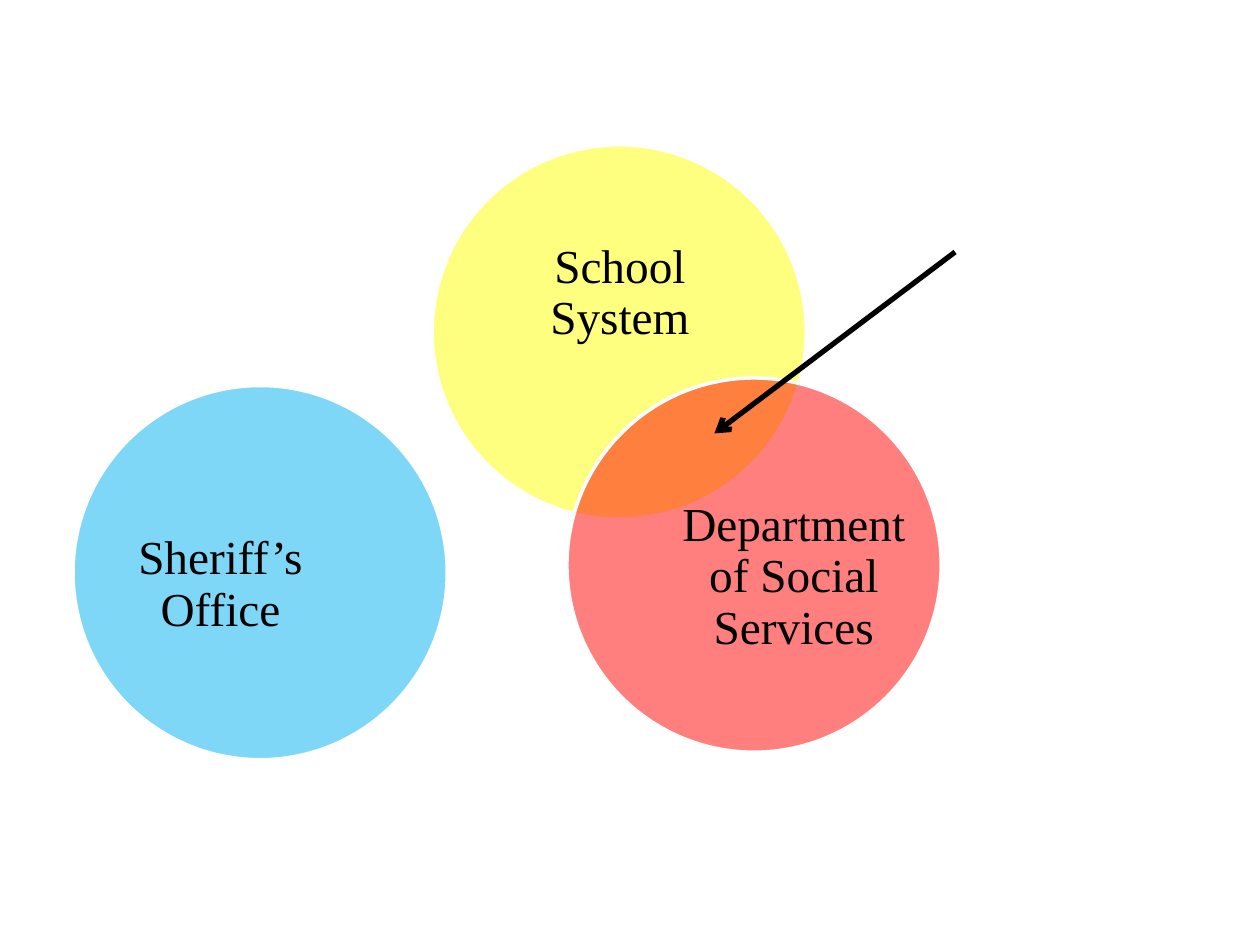
from lxml.etree import SubElement
from pptx import Presentation
from pptx.dml.color import RGBColor
from pptx.enum.shapes import MSO_CONNECTOR, MSO_SHAPE
from pptx.enum.text import MSO_ANCHOR, PP_ALIGN
from pptx.oxml.ns import qn
from pptx.util import Pt

BLACK = RGBColor(0x00, 0x00, 0x00)
WHITE = RGBColor(0xFF, 0xFF, 0xFF)
YELLOW = RGBColor(0xFF, 0xFF, 0x00)
RED = RGBColor(0xFF, 0x00, 0x00)
BLUE = RGBColor(0x00, 0xB0, 0xF0)

DIAMETER = 213.84

# label, colour, circle left and top, label box left, top, width and height
AGENCIES = [
    ("School System", YELLOW, (246.96, 82.8), (275.76, 119.52, 156.96, 96.48)),
    ("Department of Social Services", RED, (324, 216), (389.52, 271.44, 128.16, 117.36)),
    ("Sheriff’s Office", BLUE, (41.76, 220.32), (61.92, 275.76, 128.16, 117.36)),
]


def add_circle(slide, left, top, color, opacity=50):
    circle = slide.shapes.add_shape(
        MSO_SHAPE.OVAL, Pt(left), Pt(top), Pt(DIAMETER), Pt(DIAMETER))
    circle.shadow.inherit = False
    circle.fill.solid()
    circle.fill.fore_color.rgb = color
    rgb = circle.fill._xPr.find(qn("a:solidFill")).find(qn("a:srgbClr"))
    SubElement(rgb, qn("a:alpha"), val=str(opacity * 1000))
    circle.line.color.rgb = WHITE
    circle.line.width = Pt(2)


def add_text(slide, text, box, size=27, font="Times New Roman", color=BLACK,
             align=PP_ALIGN.CENTER, anchor=MSO_ANCHOR.MIDDLE):
    frame = slide.shapes.add_textbox(*map(Pt, box)).text_frame
    frame.word_wrap = True
    frame.vertical_anchor = anchor
    frame.margin_left = frame.margin_right = 0
    frame.margin_top = frame.margin_bottom = 0
    paragraph = frame.paragraphs[0]
    paragraph.alignment = align
    paragraph.line_spacing = 0.9
    paragraph.space_after = Pt(0.35 * size)
    run = paragraph.add_run()
    run.text = text
    run.font.size = Pt(size)
    run.font.name = font
    run.font.color.rgb = color


def add_arrow(slide, start, end, color=BLACK, width=3):
    arrow = slide.shapes.add_connector(
        MSO_CONNECTOR.STRAIGHT, *map(Pt, start + end))
    arrow.line.color.rgb = color
    arrow.line.width = Pt(width)
    SubElement(arrow.line._get_or_add_ln(), qn("a:tailEnd"), type="arrow")
    SubElement(arrow._element.spPr, qn("a:effectLst"))


def main():
    prs = Presentation()
    prs.slide_width, prs.slide_height = Pt(720), Pt(540)
    slide = prs.slides.add_slide(prs.slide_layouts[6])
    for label, color, corner, label_box in AGENCIES:
        add_circle(slide, *corner, color)
        add_text(slide, label, label_box)
    add_arrow(slide, (545.76, 144), (408.24, 247.68))
    prs.save("out.pptx")


if __name__ == "__main__":
    main()
